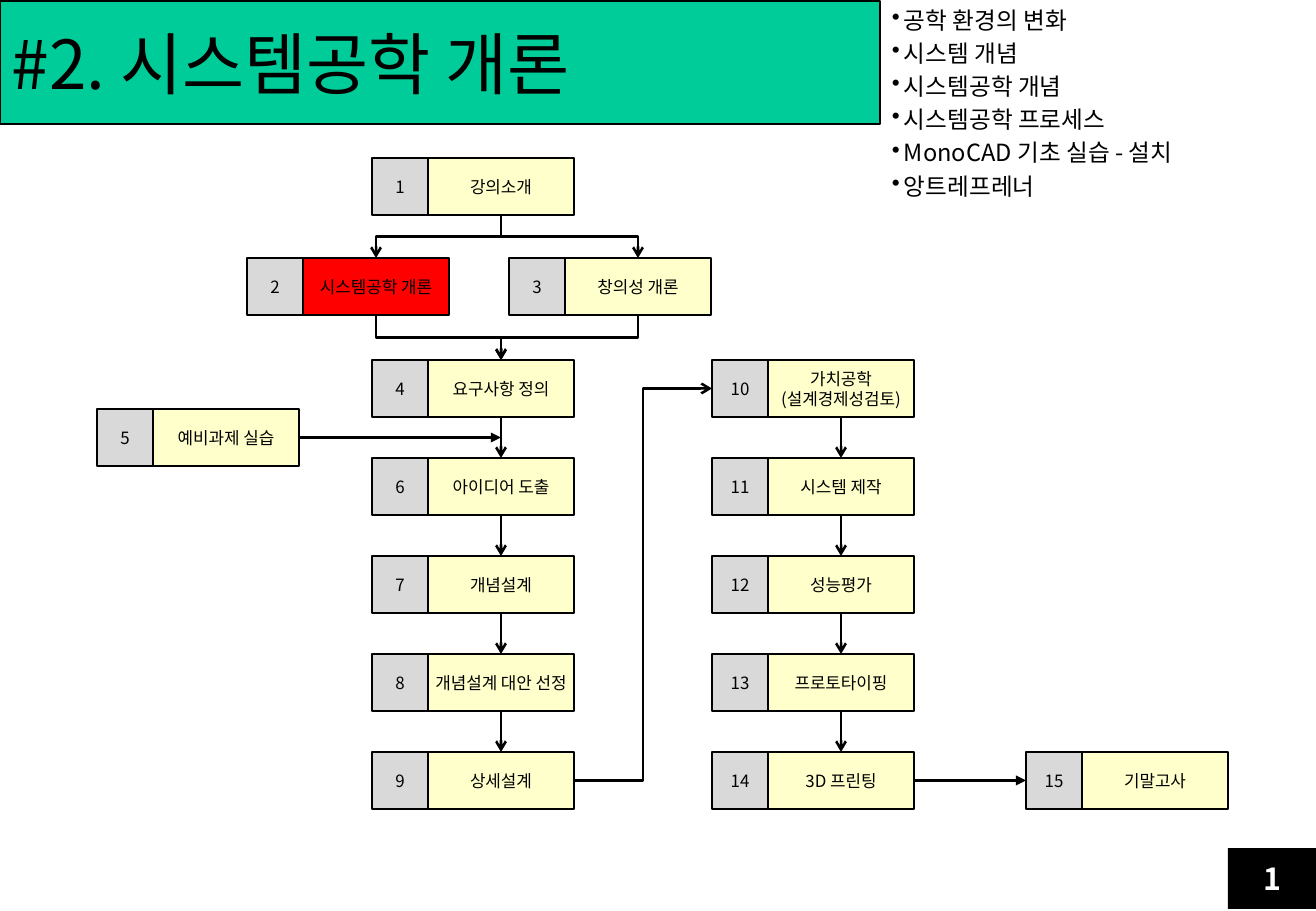
from lxml.etree import SubElement
from pptx import Presentation
from pptx.dml.color import RGBColor
from pptx.enum.shapes import MSO_CONNECTOR as LINK, MSO_SHAPE as SHAPE
from pptx.enum.text import MSO_ANCHOR as ANCHOR, PP_ALIGN as ALIGN
from pptx.oxml.ns import qn
from pptx.util import Emu, Pt

# Content
TITLE = "#2. 시스템공학 개론"
TOPICS = ["공학 환경의 변화", "시스템 개념", "시스템공학 개념", "시스템공학 프로세스",
          "MonoCAD 기초 실습 - 설치", "앙트레프레너"]
PAGE_NUMBER = "1"
CURRENT_WEEK = 2
# week: (column, row, lines)
WEEKS = {
    1: ("main", "intro", ["강의소개"]),
    2: ("fork_left", "fork", ["시스템공학 개론"]),
    3: ("fork_right", "fork", ["창의성 개론"]),
    4: ("main", 0, ["요구사항 정의"]),
    5: ("side", 0.5, ["예비과제 실습"]),
    6: ("main", 1, ["아이디어 도출"]),
    7: ("main", 2, ["개념설계"]),
    8: ("main", 3, ["개념설계 대안 선정"]),
    9: ("main", 4, ["상세설계"]),
    10: ("build", 0, ["가치공학", "(설계경제성검토)"]),
    11: ("build", 1, ["시스템 제작"]),
    12: ("build", 2, ["성능평가"]),
    13: ("build", 3, ["프로토타이핑"]),
    14: ("build", 4, ["3D 프린팅"]),
    15: ("final", 4, ["기말고사"]),
}
DOWN_STEPS = [(4, 6), (6, 7), (7, 8), (8, 9), (10, 11), (11, 12), (12, 13), (13, 14)]
FORK_STEPS = [(1, 2), (1, 3), (2, 4), (3, 4)]

# Theme
THEME = {
    "font": "Noto Sans CJK KR",
    "ink": "000000", "paper": "FFFFFF", "banner": "00CC99",
    "step": "FFFFCC", "current": "FF0000", "number": "D9D9D9",
    "title_pt": 40, "topic_pt": 14, "page_pt": 18, "step_pt": 10,
    "topic_gap_pt": 2.8, "border_pt": 1, "link_pt": 1.5,
}

# Layout in px
SLIDE_W, SLIDE_H = 1316, 911
BANNER_W, BANNER_H = 880, 123
PAGE_W, PAGE_H, PAGE_TOP = 88, 61, 848
STEP_W, STEP_H, NUMBER_W = 202, 57, 56
COLUMNS = {"side": 97, "fork_left": 247, "main": 372, "fork_right": 509,
           "build": 712, "final": 1026}
TOP_ROWS = {"intro": 158, "fork": 258}
GRID_TOP, ROW_PITCH = 360, 98
STEP_INSET, TOPIC_INDENT = 5, 12


def px(length):
    return Emu(round(length * 914400 / 121.5))


def color(name):
    return RGBColor.from_string(THEME[name])


def write(paragraph, words, size, ink="ink", bold=False):
    run = paragraph.add_run()
    run.text = words
    font = run.font
    font.name, font.size, font.bold = THEME["font"], Pt(THEME[size]), bold
    font.color.rgb = color(ink)
    SubElement(font._element, qn("a:ea")).set("typeface", THEME["font"])


def add_box(box, kind, fill, lines, size, ink="ink", align=ALIGN.CENTER,
            bold=False, border=True, insets=None):
    shape = slide.shapes.add_shape(kind, *map(px, box))
    shape.shadow.inherit = False
    shape.fill.solid()
    shape.fill.fore_color.rgb = color(fill)
    if border:
        shape.line.color.rgb = color("ink")
        shape.line.width = Pt(THEME["border_pt"])
    else:
        shape.line.fill.background()
    frame = shape.text_frame
    frame.word_wrap = True
    frame.vertical_anchor = ANCHOR.MIDDLE
    if insets:
        frame.margin_left = frame.margin_right = px(insets[0])
        frame.margin_top = frame.margin_bottom = px(insets[1])
    for index, words in enumerate(lines):
        paragraph = frame.add_paragraph() if index else frame.paragraphs[0]
        paragraph.alignment = align
        write(paragraph, words, size, ink, bold)


def add_link(kind, start, end, head="arrow"):
    link = slide.shapes.add_connector(kind, *map(px, (*start, *end)))
    link.line.color.rgb = color("ink")
    link.line.width = Pt(THEME["link_pt"])
    SubElement(link.line._get_or_add_ln(), qn("a:tailEnd")).set("type", head)
    SubElement(link._element.spPr, qn("a:effectLst"))
    return link


def add_down_elbow(start, end):
    """Elbow that leaves and arrives vertically: a level elbow turned a quarter."""
    (x1, y1), (x2, y2) = start, end
    mid_x, mid_y = (x1 + x2) / 2, (y1 + y2) / 2
    half_w, half_h = (y2 - y1) / 2, abs(x2 - x1) / 2
    turn, side = (270, 1) if x2 > x1 else (90, -1)
    link = add_link(LINK.ELBOW, (mid_x + side * half_w, mid_y - half_h),
                    (mid_x - side * half_w, mid_y + half_h))
    link._element.spPr.find(qn("a:xfrm")).set("rot", str(turn * 60000))


def corner(week):
    column, row, _ = WEEKS[week]
    top = TOP_ROWS[row] if row in TOP_ROWS else GRID_TOP + row * ROW_PITCH
    return COLUMNS[column], top


def port(week, side):
    left, top = corner(week)
    label_mid = left + (NUMBER_W + STEP_W) / 2
    return {"top": (label_mid, top), "bottom": (label_mid, top + STEP_H),
            "left": (left, top + STEP_H / 2),
            "right": (left + STEP_W, top + STEP_H / 2)}[side]


deck = Presentation()
deck.slide_width, deck.slide_height = px(SLIDE_W), px(SLIDE_H)
slide = deck.slides.add_slide(deck.slide_layouts[6])

# Title banner and page number
add_box((0, 1, BANNER_W, BANNER_H), SHAPE.RECTANGLE, "banner", [TITLE], "title_pt",
        align=ALIGN.LEFT)
add_box((SLIDE_W - PAGE_W, PAGE_TOP, PAGE_W, PAGE_H), SHAPE.RECTANGLE, "ink",
        [PAGE_NUMBER], "page_pt", ink="paper", bold=True, border=False)

# Topic list
topics = slide.shapes.add_textbox(*map(px, (BANNER_W, 0, SLIDE_W - BANNER_W, 177))).text_frame
topics.word_wrap = True
for index, topic in enumerate(TOPICS):
    paragraph = topics.add_paragraph() if index else topics.paragraphs[0]
    paragraph.space_before = Pt(THEME["topic_gap_pt"])
    props = paragraph._p.get_or_add_pPr()
    props.set("marL", str(px(TOPIC_INDENT)))
    props.set("indent", str(-px(TOPIC_INDENT)))
    SubElement(props, qn("a:buChar")).set("char", "•")
    write(paragraph, topic, "topic_pt")

# Weekly steps
for week, (_, _, lines) in WEEKS.items():
    left, top = corner(week)
    add_box((left + NUMBER_W, top, STEP_W - NUMBER_W, STEP_H), SHAPE.FLOWCHART_PROCESS,
            "current" if week == CURRENT_WEEK else "step", lines, "step_pt",
            insets=(STEP_INSET, STEP_INSET))
    add_box((left, top, NUMBER_W, STEP_H), SHAPE.FLOWCHART_PROCESS, "number",
            [str(week)], "step_pt", insets=(0, STEP_INSET))

# Arrows between steps
for upper, lower in DOWN_STEPS:
    add_link(LINK.STRAIGHT, port(upper, "bottom"), port(lower, "top"))
for upper, lower in FORK_STEPS:
    add_down_elbow(port(upper, "bottom"), port(lower, "top"))
add_link(LINK.ELBOW, port(9, "right"), port(10, "left"))
practice_out = port(5, "right")
add_link(LINK.STRAIGHT, practice_out, (port(4, "bottom")[0], practice_out[1]), "triangle")
add_link(LINK.STRAIGHT, port(14, "right"), port(15, "left"), "triangle")

deck.save("out.pptx")
